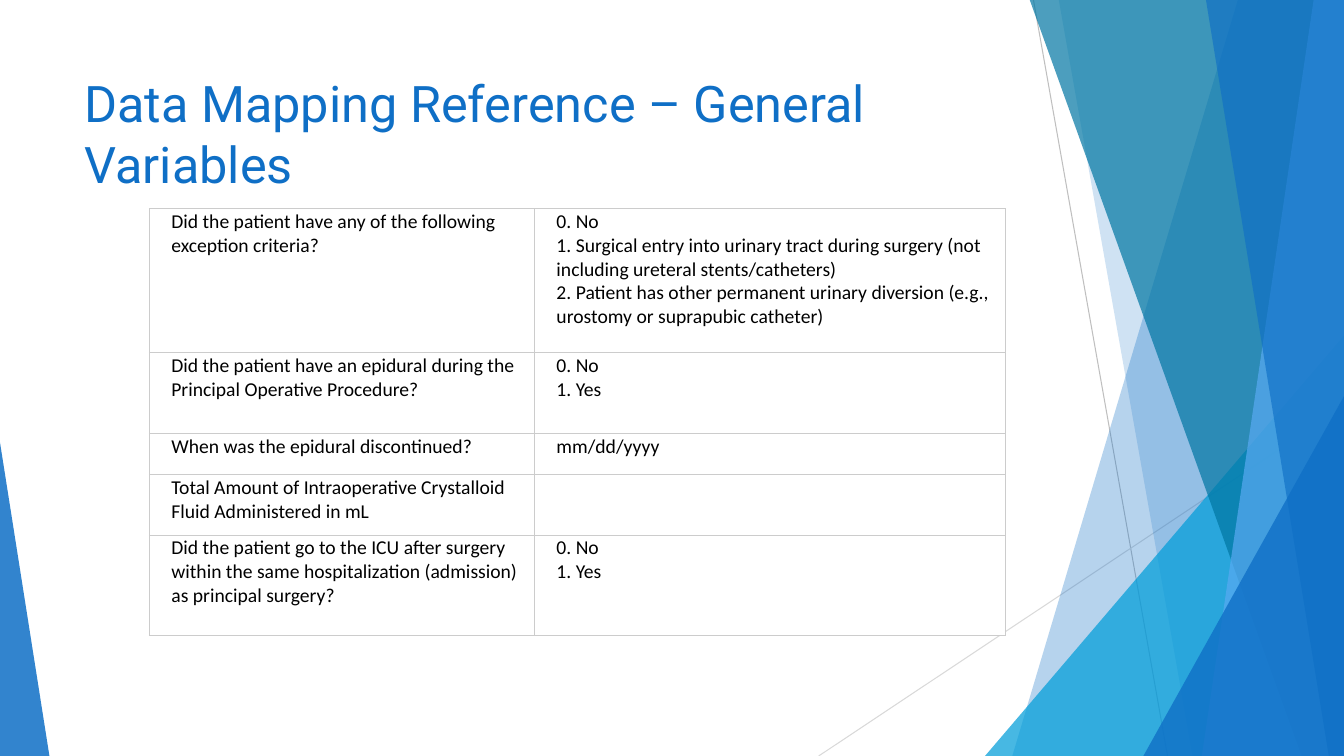
from lxml.etree import SubElement
from pptx import Presentation
from pptx.dml.color import RGBColor
from pptx.enum.shapes import MSO_CONNECTOR, MSO_SHAPE
from pptx.enum.text import MSO_ANCHOR
from pptx.oxml import parse_xml
from pptx.oxml.ns import nsdecls, qn
from pptx.util import Inches, Pt

COLORS = {
    "blue": "0F6FC6", "cyan": "009DD9", "teal": "0076A3", "sky": "59AAF2",
    "grey": "BFBFBF", "pale": "D9D9D9", "border": "CCCCCC",
    "black": "000000", "white": "FFFFFF",
}
WIDTH, HEIGHT = 13.33, 7.5
BLEED = -0.01
YES_NO = ["0. No", "1. Yes"]
QUESTIONS = [
    (1.43, "Did the patient have any of the following exception criteria?",
     ["0. No",
      "1. Surgical entry into urinary tract during surgery (not including ureteral stents/catheters)",
      "2. Patient has other permanent urinary diversion (e.g., urostomy or suprapubic catheter)"]),
    (0.8, "Did the patient have an epidural during the Principal Operative Procedure?", YES_NO),
    (0.41, "When was the epidural discontinued?", ["mm/dd/yyyy"]),
    (0.6, "Total Amount of Intraoperative Crystalloid Fluid Administered in mL", []),
    (0.99, "Did the patient go to the ICU after surgery within the same hospitalization "
           "(admission) as principal surgery?", YES_NO),
]


def rgb(color):
    """Return the named colour."""
    return RGBColor.from_string(COLORS[color])


def paint(facet, color, opacity):
    """Give a facet a translucent fill, no line and no shadow."""
    facet.shadow.inherit = False
    facet.line.fill.background()
    facet.fill.solid()
    facet.fill.fore_color.rgb = rgb(color)
    tint = facet.fill._xPr.find(qn("a:solidFill"))[0]
    SubElement(tint, qn("a:alpha")).set("val", str(opacity * 1000))


def add_band(slide, top_x, bottom_x, color, opacity):
    """Draw a full-height band from a slanted edge to the right side."""
    outline = slide.shapes.build_freeform(Inches(top_x), Inches(BLEED))
    corners = [(WIDTH, BLEED), (WIDTH, HEIGHT), (bottom_x, HEIGHT)]
    outline.add_line_segments([(Inches(x), Inches(y)) for x, y in corners], close=True)
    paint(outline.convert_to_shape(), color, opacity)


def add_wedge(slide, left, top, right, apex, color, opacity):
    """Draw a triangle standing on the bottom of the slide."""
    wedge = slide.shapes.add_shape(
        MSO_SHAPE.ISOSCELES_TRIANGLE, Inches(left), Inches(top),
        Inches(right - left), Inches(HEIGHT - top))
    wedge.adjustments[0] = apex
    paint(wedge, color, opacity)


def add_hairline(slide, start, end, color):
    """Draw a thin straight line."""
    points = [Inches(value) for value in start + end]
    hairline = slide.shapes.add_connector(MSO_CONNECTOR.STRAIGHT, *points)
    hairline.line.color.rgb = rgb(color)
    hairline.line.width = Pt(0.75)
    SubElement(hairline._element.spPr, qn("a:effectLst"))


def add_text(paragraph, text, font, size, color):
    """Append one formatted run."""
    run = paragraph.add_run()
    run.text = text
    run.font.name = font
    run.font.size = Pt(size)
    run.font.color.rgb = rgb(color)


def add_title(slide, text):
    """Place the slide title."""
    title = slide.shapes.add_textbox(Inches(0.74), Inches(0.67), Inches(9.4), Inches(1.44))
    frame = title.text_frame
    frame.word_wrap = True
    frame.vertical_anchor = MSO_ANCHOR.TOP
    add_text(frame.paragraphs[0], text, "Roboto", 36, "blue")


def fill_cell(cell, lines):
    """Write the lines of a cell and set its fill, margins and borders."""
    cell.margin_left = cell.margin_right = Inches(0.02)
    cell.margin_top = cell.margin_bottom = Inches(0.01)
    cell.fill.solid()
    cell.fill.fore_color.rgb = rgb("white")
    paragraph = cell.text_frame.paragraphs[0]
    indent = paragraph._p.get_or_add_pPr()
    indent.set("marL", str(Inches(0.2)))
    indent.set("indent", "0")
    for number, line in enumerate(lines):
        if number:
            paragraph.add_line_break()
        add_text(paragraph, line, "Calibri", 14, "black")
    properties = cell._tc.get_or_add_tcPr()
    for position, side in enumerate(("lnL", "lnR", "lnT", "lnB")):
        properties.insert(position, parse_xml(
            f'<a:{side} {nsdecls("a")} w="{Pt(0.75)}"><a:solidFill>'
            f'<a:srgbClr val="{COLORS["border"]}"/></a:solidFill></a:{side}>'))


def add_question_table(slide):
    """Build the table of questions and their answer codes."""
    column_widths = (3.82, 4.67)
    total_height = sum(height for height, _, _ in QUESTIONS)
    table = slide.shapes.add_table(
        len(QUESTIONS), 2, Inches(1.48), Inches(2.07),
        Inches(sum(column_widths)), Inches(total_height)).table
    table.first_row = table.horz_banding = False
    for column, width in zip(table.columns, column_widths):
        column.width = Inches(width)
    for row, (height, question, answers) in zip(table.rows, QUESTIONS):
        row.height = Inches(height)
        fill_cell(row.cells[0], [question])
        fill_cell(row.cells[1], answers)


def add_backdrop(slide):
    """Draw the lines and overlapping facets behind the content."""
    add_hairline(slide, (10.25, 0), (11.58, HEIGHT), "grey")
    add_hairline(slide, (WIDTH, 4.03), (8.12, HEIGHT), "pale")
    add_band(slide, 12.28, 10.04, "blue", 30)
    add_band(slide, 10.5, 11.83, "blue", 20)
    add_wedge(slide, 9.77, 3.33, WIDTH, 1, "cyan", 72)
    add_band(slide, 10.21, 12.91, "teal", 70)
    add_band(slide, 13.03, 11.92, "sky", 70)
    add_band(slide, 11.96, 13.18, "blue", 65)
    add_wedge(slide, 11.34, 3.93, WIDTH, 1, "blue", 80)
    add_wedge(slide, 0, 4.39, 0.49, 0, "blue", 85)


def main():
    """Build and save the slide."""
    deck = Presentation()
    deck.slide_width, deck.slide_height = Inches(WIDTH), Inches(HEIGHT)
    slide = deck.slides.add_slide(deck.slide_layouts[6])
    add_backdrop(slide)
    add_title(slide, "Data Mapping Reference – General Variables")
    add_question_table(slide)
    deck.save("out.pptx")


if __name__ == "__main__":
    main()
